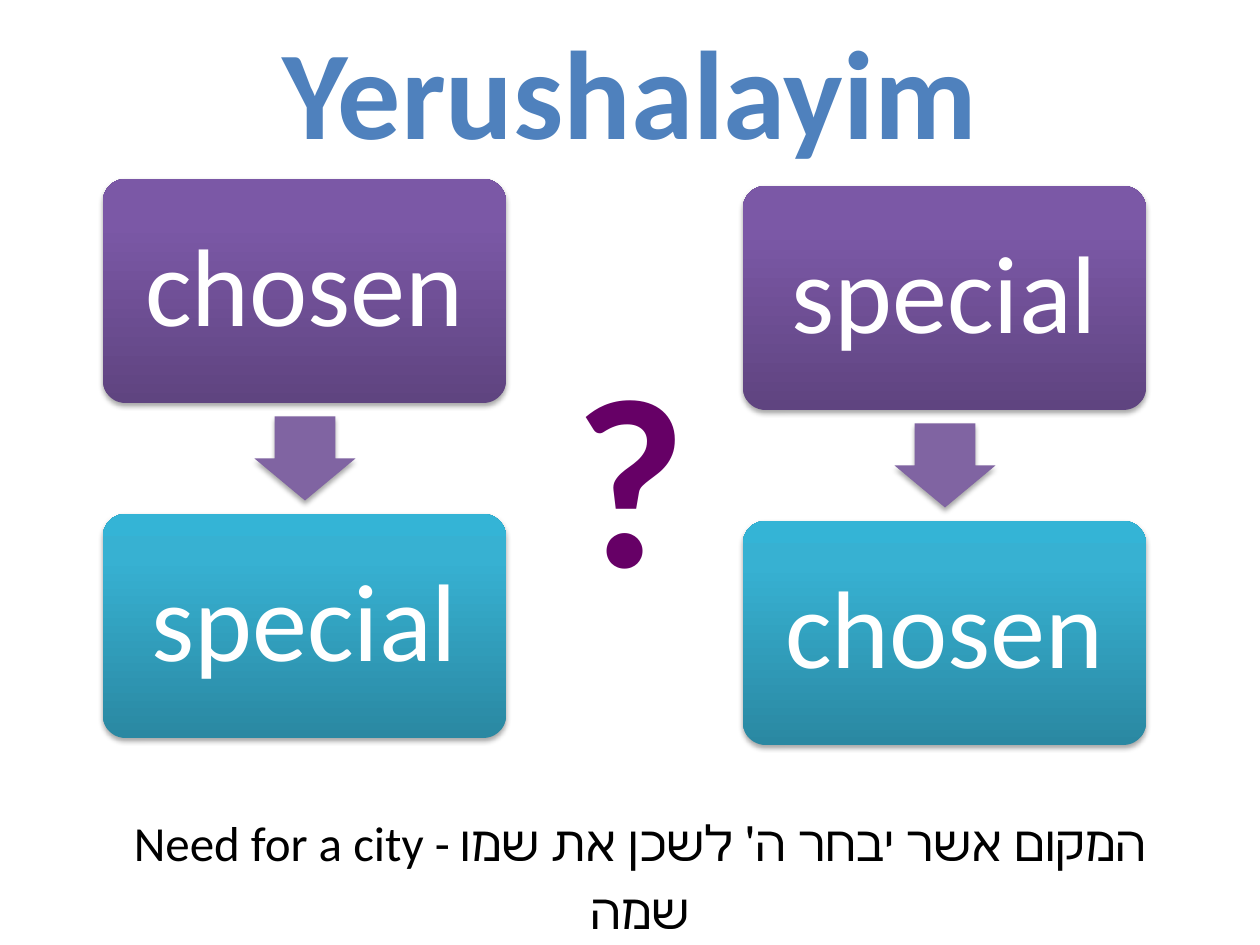
from lxml.etree import SubElement
from pptx import Presentation
from pptx.dml.color import RGBColor
from pptx.enum.shapes import MSO_SHAPE
from pptx.enum.text import MSO_ANCHOR, PP_ALIGN
from pptx.oxml import parse_xml
from pptx.oxml.ns import nsdecls, qn
from pptx.util import Emu, Pt

PX = 914400 // 126
COLORS = {"title": "4F81BD", "text": "000000", "word": "FFFFFF",
          "question": "660066", "arrow": "8064A2", "shadow": "000000"}
GRADIENTS = [
    [(0, "5F4480"), (80, "7B58A6"), (100, "7C57A8")],
    [(0, "2A88A2"), (80, "37B1D2"), (100, "34B4D6")],
]
TITLE = "Yerushalayim"
QUESTION = "?"
FOOTER = "Need for a city - המקום אשר יבחר ה' לשכן את שמו שמה"
FLOWS = [
    ((103, 179), ["chosen", "special"]),
    ((743, 186), ["special", "chosen"]),
]
BOX_W, BOX_H, GAP = 403, 224, 111
ARROW_W, ARROW_H = 84, 101
INSET = 20


def px(*values):
    return [Emu(v * PX) for v in values]


def write(shape, text, size, color, bold=False, anchor=MSO_ANCHOR.TOP, spacing=1.0):
    tf = shape.text_frame
    tf.word_wrap = True
    tf.vertical_anchor = anchor
    p = tf.paragraphs[0]
    p.alignment = PP_ALIGN.CENTER
    p.line_spacing = spacing
    r = p.add_run()
    r.text = text
    for name, value in {"name": "Calibri", "size": Pt(size), "bold": bold}.items():
        setattr(r.font, name, value)
    r.font.color.rgb = RGBColor.from_string(COLORS[color])
    return tf


def add_shadow(shape):
    effects = SubElement(shape._element.spPr, qn("a:effectLst"))
    effects.append(parse_xml(
        f'<a:outerShdw {nsdecls("a")} blurRad="{Pt(3.1)}" dist="{Pt(1.8)}" '
        f'dir="5400000" rotWithShape="0"><a:srgbClr val="{COLORS["shadow"]}">'
        '<a:alpha val="35000"/></a:srgbClr></a:outerShdw>'))


def fill_gradient(shape, stops):
    shape.fill.gradient()
    shape.fill.gradient_angle = 90
    grad = shape._element.spPr.find(qn("a:gradFill"))
    gs_list = grad.find(qn("a:gsLst"))
    for gs in list(gs_list):
        gs_list.remove(gs)
    for pos, color in stops:
        gs = SubElement(gs_list, qn("a:gs"), pos=str(pos * 1000))
        SubElement(gs, qn("a:srgbClr"), val=color)


def add_box(s, x, y, word, stops):
    sp = s.shapes.add_shape(MSO_SHAPE.ROUNDED_RECTANGLE, *px(x, y, BOX_W, BOX_H))
    sp.adjustments[0] = 0.1
    fill_gradient(sp, stops)
    sp.line.fill.background()
    add_shadow(sp)
    tf = write(sp, word, 63, "word", anchor=MSO_ANCHOR.MIDDLE, spacing=0.9)
    for side in ("left", "top", "right", "bottom"):
        setattr(tf, f"margin_{side}", Emu(INSET * PX))


def add_arrow(s, x, y):
    left = x + (BOX_W - ARROW_W + 1) // 2
    top = y + BOX_H + (GAP - ARROW_H) // 2
    sp = s.shapes.add_shape(MSO_SHAPE.RIGHT_ARROW, *px(left, top, ARROW_W, ARROW_H))
    sp.rotation = 90
    sp.adjustments[0], sp.adjustments[1] = 0.6, 0.5
    sp.fill.solid()
    sp.fill.fore_color.rgb = RGBColor.from_string(COLORS["arrow"])
    sp.line.fill.background()
    add_shadow(sp)


def main():
    prs = Presentation()
    prs.slide_width, prs.slide_height = px(1260, 945)
    s = prs.slides.add_slide(prs.slide_layouts[5])

    title = s.shapes.title
    title.left, title.top, title.width, title.height = px(63, 10, 1134, 158)
    write(title, TITLE, 72, "title", bold=True, anchor=MSO_ANCHOR.MIDDLE)

    footer = s.shapes.add_textbox(*px(73, 798, 1134, 147))
    tf = write(footer, FOOTER, 28, "text", spacing=1.15)
    tf.paragraphs[0].space_before = Pt(5.6)

    for (x, y), words in FLOWS:
        for i, (word, stops) in enumerate(zip(words, GRADIENTS)):
            add_box(s, x, y + i * (BOX_H + GAP), word, stops)
        add_arrow(s, x, y)

    question = s.shapes.add_textbox(*px(562, 320, 136, 305))
    write(question, QUESTION, 138, "question", bold=True)

    prs.save("out.pptx")


if __name__ == "__main__":
    main()
